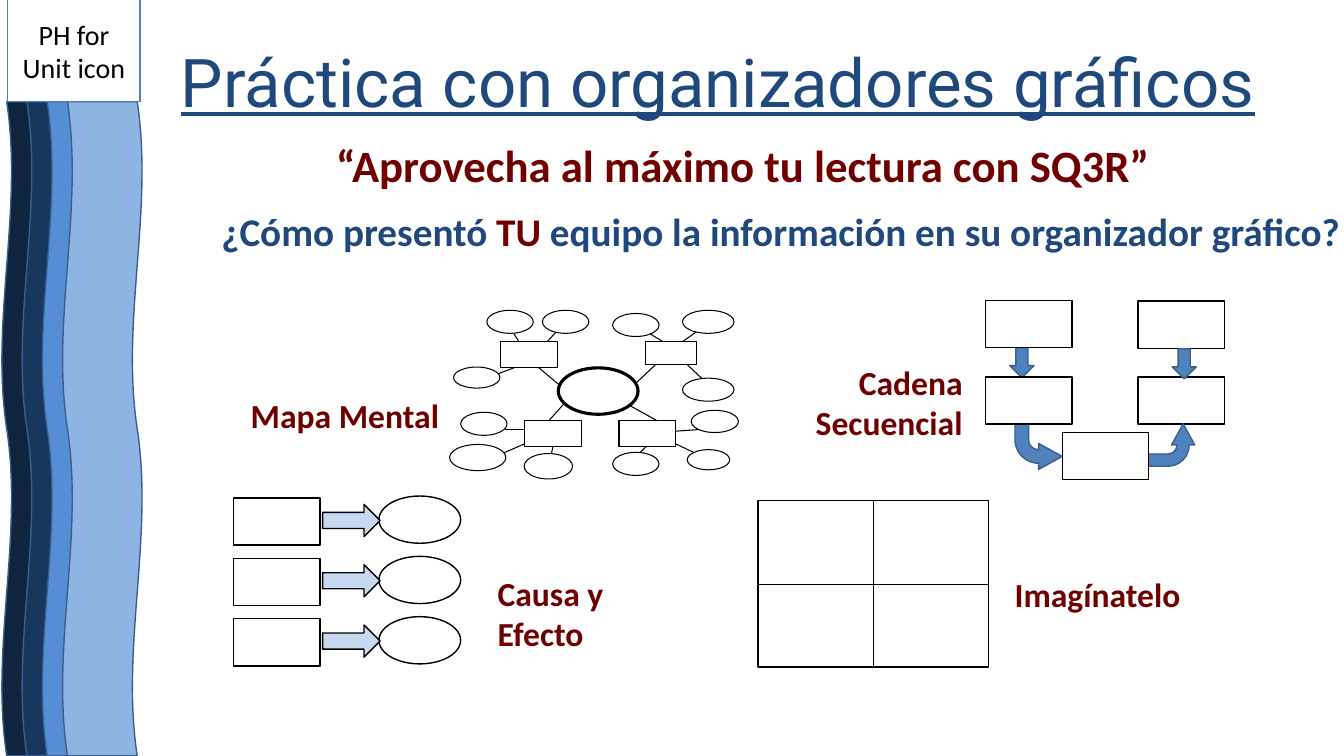
from dataclasses import dataclass
from typing import NamedTuple

from lxml.etree import SubElement
from pptx import Presentation
from pptx.dml.color import RGBColor
from pptx.enum.shapes import MSO_CONNECTOR, MSO_SHAPE
from pptx.enum.text import MSO_ANCHOR, MSO_AUTO_SIZE, PP_ALIGN
from pptx.oxml.ns import qn
from pptx.util import Cm, Pt

BLACK, WHITE = "000000", "FFFFFF"
NAVY, MAROON = "1F497D", "700000"
BLUE, EDGE, PALE = "4F81BD", "3A5F8C", "C6D9F1"
BOX_W, BOX_H = 2.18, 1.19
RECT, OVAL = MSO_SHAPE.RECTANGLE, MSO_SHAPE.OVAL
DOWN, BENT = MSO_SHAPE.DOWN_ARROW, MSO_SHAPE.BENT_ARROW


@dataclass
class Item:
    kind: MSO_SHAPE
    x: float
    y: float
    w: float
    h: float
    fill: str | None = WHITE
    line: str = BLACK
    weight: float = 1
    rotation: float = 0
    flip: bool = False
    adjust: tuple[float, ...] = ()


class Link(NamedTuple):
    x1: float
    y1: float
    x2: float
    y2: float


class Span(NamedTuple):
    text: str
    size: float
    color: str
    bold: bool = True
    font: str = "Calibri"
    underline: bool = False


class Label(NamedTuple):
    text: str
    x: float
    y: float
    w: float
    h: float
    align: PP_ALIGN = PP_ALIGN.LEFT


def rgb(code: str) -> RGBColor:
    return RGBColor.from_string(code)


def draw(shapes, item: Item):
    s = shapes.add_shape(item.kind, Cm(item.x), Cm(item.y), Cm(item.w), Cm(item.h))
    s.shadow.inherit = False
    if item.fill:
        s.fill.solid()
        s.fill.fore_color.rgb = rgb(item.fill)
    else:
        s.fill.background()
    s.line.color.rgb = rgb(item.line)
    s.line.width = Pt(item.weight)
    s.rotation = item.rotation
    for i, value in enumerate(item.adjust):
        s.adjustments[i] = value
    if item.flip:
        s._element.spPr.find(qn("a:xfrm")).set("flipV", "1")
    return s


def connect(shapes, link: Link, weight: float) -> None:
    x1, y1, x2, y2 = map(Cm, link)
    c = shapes.add_connector(MSO_CONNECTOR.STRAIGHT, x1, y1, x2, y2)
    c.line.color.rgb = rgb(BLACK)
    c.line.width = Pt(weight)
    SubElement(c._element.spPr, qn("a:effectLst"))


def write(p, spans: list[Span], align: PP_ALIGN, after: float = 0) -> None:
    p.alignment = align
    p.space_after = Pt(after)
    for span in spans:
        r = p.add_run()
        r.text = span.text
        f = r.font
        f.name, f.size, f.bold = span.font, Pt(span.size), span.bold
        f.underline = span.underline
        f.color.rgb = rgb(span.color)


def text_frame(shapes, x: float, y: float, w: float, h: float):
    tf = shapes.add_textbox(Cm(x), Cm(y), Cm(w), Cm(h)).text_frame
    tf.word_wrap = True
    tf.auto_size = MSO_AUTO_SIZE.SHAPE_TO_FIT_TEXT
    return tf


def step_box(x: float, y: float) -> Item:
    return Item(RECT, x, y, BOX_W, BOX_H)


MIND_LINKS = [
    Link(13.79, 8.61, 14.02, 8.36), Link(16.71, 8.61, 16.38, 8.41),
    Link(17.2, 8.61, 17.55, 8.36), Link(13, 9.25, 12.55, 9.42),
    Link(13.31, 10.82, 12.73, 10.82), Link(13.23, 11.18, 12.65, 11.43),
    Link(13.89, 11.46, 13.94, 11.23), Link(15.82, 10.19, 16.54, 10.59),
    Link(17.68, 10.82, 16.97, 10.87), Link(17.02, 11.18, 17.48, 11.4),
    Link(16.31, 11.23, 16.13, 11.4), Link(14.2, 10.19, 13.84, 10.59),
    Link(16.03, 9.65, 16.54, 9.17), Link(14.07, 9.68, 13.56, 9.25),
    Link(13.08, 8.61, 12.95, 8.41), Link(17.32, 9.19, 17.68, 9.53),
]
MIND_LEAVES = [
    (15.44, 11.4, 1.17, 0.58), (17.42, 10.34, 1.19, 0.56), (17.32, 11.33, 1.07, 0.51),
    (11.61, 10.39, 1.17, 0.58), (11.33, 11.2, 1.42, 0.66), (13.21, 11.43, 1.22, 0.64),
    (17.2, 9.53, 1.3, 0.58), (17.2, 7.82, 1.3, 0.58), (15.44, 7.9, 1.17, 0.58),
    (13.67, 7.82, 1.17, 0.58), (12.27, 7.82, 1.17, 0.58), (11.43, 9.25, 1.17, 0.53),
]
MIND_BRANCHES = [
    (13.23, 10.59, 1.42, 0.66), (15.6, 10.59, 1.42, 0.66),
    (12.62, 8.61, 1.42, 0.66), (16.26, 8.61, 1.3, 0.58),
]
BEND = (0.288, 0.275, 0.5, 0.647)
SEQUENCE = [
    Item(DOWN, 25.45, 8.76, 0.61, 0.76, BLUE, EDGE),
    step_box(24.84, 7.57), step_box(28.68, 9.5), step_box(28.68, 7.59),
    Item(DOWN, 29.54, 8.79, 0.61, 0.76, BLUE, EDGE),
    Item(BENT, 25.58, 10.64, 1.19, 1.19, BLUE, EDGE, flip=True, adjust=BEND),
    step_box(24.84, 9.5),
    Item(BENT, 28.98, 10.62, 1.07, 1.19, BLUE, EDGE, rotation=270, flip=True, adjust=BEND),
    step_box(26.77, 10.9),
]
LABELS = [
    Label("Mapa Mental", 6.07, 9.83, 5.61, 1.27),
    Label("Cadena Secuencial", 20.19, 8.99, 4.32, 2.31, PP_ALIGN.RIGHT),
    Label("Imagínatelo", 25.32, 14.33, 4.98, 1.27),
    Label("Causa y Efecto", 12.29, 14.3, 4.98, 2.31),
]


def main() -> None:
    prs = Presentation()
    prs.slide_width, prs.slide_height = Cm(33.87), Cm(19.05)
    shapes = prs.slides.add_slide(prs.slide_layouts[6]).shapes

    # Wavy side band and icon box
    for i, color in enumerate(("0F243E", "17375E", "558ED5", "8EB4E3")):
        draw(shapes, Item(MSO_SHAPE.DOUBLE_WAVE, -7.19 + 0.51 * i, 9.8, 16.48, 2.01,
                          color, EDGE, rotation=270))
    tf = draw(shapes, Item(RECT, 0.2, 0, 3.33, 2.57, None, BLUE, 0.75)).text_frame
    tf.word_wrap = True
    tf.vertical_anchor = MSO_ANCHOR.MIDDLE
    write(tf.paragraphs[0], [Span("PH for Unit icon", 20, BLACK, False)], PP_ALIGN.CENTER)

    # Title, subtitle and question
    tf = text_frame(shapes, 3.73, 0.89, 28.73, 4.11)
    title = Span("Práctica con organizadores gráficos", 48, NAVY, False, "Roboto", True)
    write(tf.paragraphs[0], [title], PP_ALIGN.CENTER, 12)
    p = tf.add_paragraph()
    write(p, [Span("“Aprovecha al máximo tu lectura con SQ3R”", 32, MAROON)],
          PP_ALIGN.CENTER, 12)
    p._p.get_or_add_pPr().set("marL", str(Cm(1.27)))
    tf = text_frame(shapes, 5.33, 5.11, 28.75, 2.64)
    question = [Span("¿Cómo presentó ", 28, NAVY), Span("TU ", 28, MAROON),
                Span("equipo la información en su organizador gráfico?", 28, NAVY)]
    write(tf.paragraphs[0], question, PP_ALIGN.LEFT, 18)

    # Mind map
    for link in MIND_LINKS:
        connect(shapes, link, 0.75)
    draw(shapes, Item(OVAL, 14.07, 9.27, 2.01, 1.17, weight=2.25))
    for kind, places in ((OVAL, MIND_LEAVES), (RECT, MIND_BRANCHES)):
        for place in places:
            draw(shapes, Item(kind, *place, weight=0.75))

    # Cause and effect rows
    for row in range(3):
        y = 12.55 + 1.52 * row
        draw(shapes, step_box(5.89, y))
        draw(shapes, Item(MSO_SHAPE.FLOWCHART_CONNECTOR, 9.55, y - 0.05, 2.06, BOX_H))
        draw(shapes, Item(MSO_SHAPE.RIGHT_ARROW, 8.13, y + 0.16, 1.45, 0.81, PALE))

    # Sequence chain
    for item in SEQUENCE:
        draw(shapes, item)

    # Four-part frame
    x, y, w, h = 19.1, 12.62, 5.82, 4.19
    draw(shapes, Item(RECT, x, y, w, h))
    connect(shapes, Link(x + w / 2, y, x + w / 2, y + h), 0.5)
    connect(shapes, Link(x, y + h / 2, x + w, y + h / 2), 0.5)

    # Organizer names
    for text, *place, align in LABELS:
        tf = text_frame(shapes, *place)
        write(tf.paragraphs[0], [Span(text, 24, MAROON)], align)

    prs.save("out.pptx")


if __name__ == "__main__":
    main()
